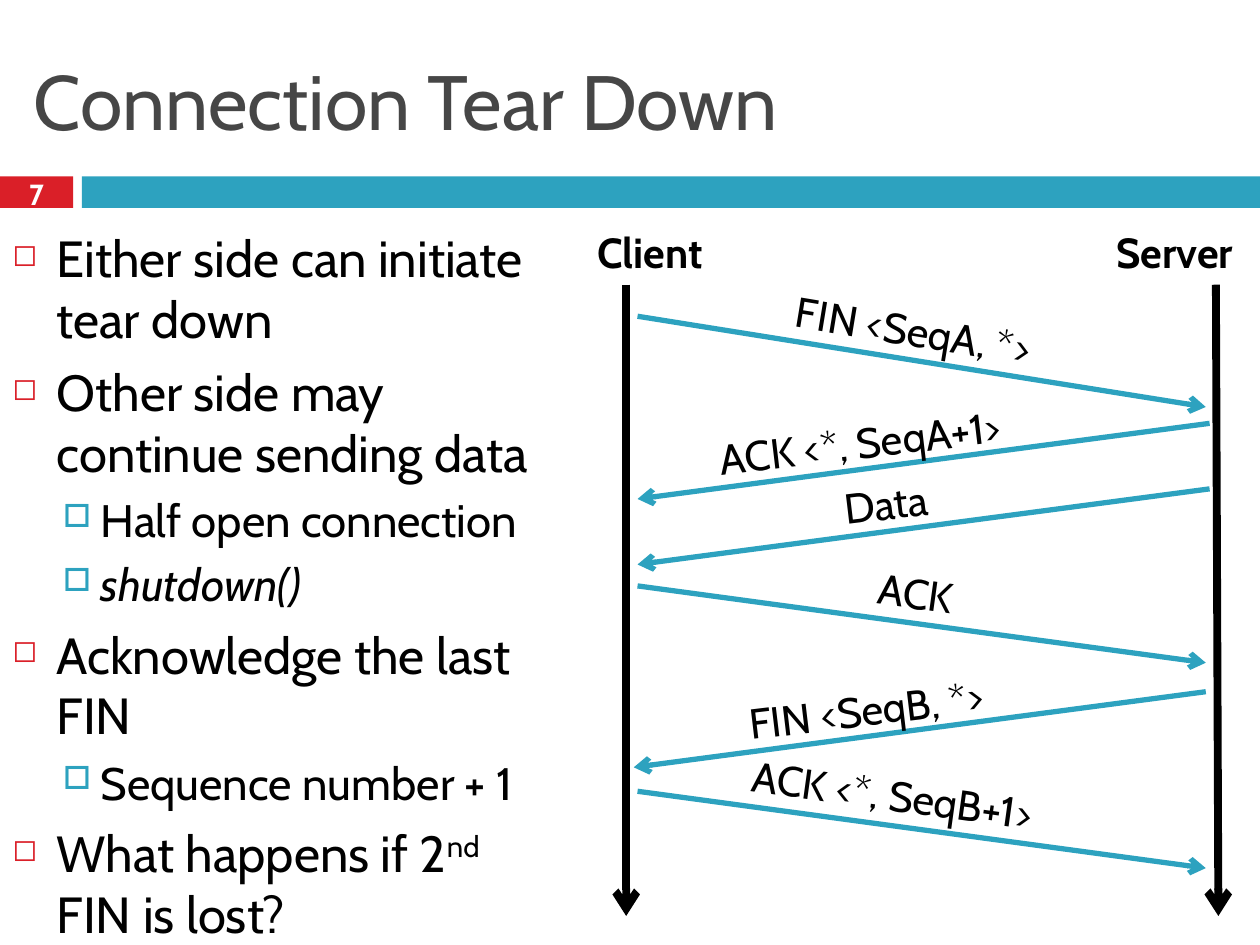
from dataclasses import dataclass

from lxml.etree import SubElement
from pptx import Presentation
from pptx.dml.color import RGBColor
from pptx.enum.shapes import MSO_CONNECTOR, MSO_SHAPE
from pptx.enum.text import MSO_ANCHOR, MSO_AUTO_SIZE, PP_ALIGN
from pptx.oxml.ns import qn
from pptx.util import Emu, Pt

PX_PER_INCH = 100
FONT = "Cabin"
RED = RGBColor(0xDA, 0x1F, 0x28)
TEAL = RGBColor(0x2D, 0xA2, 0xBF)
GREY = RGBColor(0x46, 0x46, 0x46)
BLACK = RGBColor(0, 0, 0)
WHITE = RGBColor(0xFF, 0xFF, 0xFF)


@dataclass(frozen=True)
class Level:
    size: int
    margin: int
    hang: int
    before: float
    bullet: str
    bullet_color: RGBColor
    bullet_percent: int


@dataclass(frozen=True)
class Span:
    text: str
    italic: bool = False
    superscript: bool = False


@dataclass(frozen=True)
class Bullet:
    level: Level
    spans: tuple[Span, ...]


@dataclass(frozen=True)
class Message:
    text: str
    start: tuple[int, int]
    end: tuple[int, int]
    label: tuple[int, int, int]  # left, top, width
    angle: float


MAIN = Level(29, 35, 35, 7, "◻", RED, 60)
SUB = Level(26, 70, 30, 5.5, "□", TEAL, 70)

BULLETS = [
    Bullet(MAIN, (Span("Either side can initiate tear down"),)),
    Bullet(MAIN, (Span("Other side may continue sending data"),)),
    Bullet(SUB, (Span("Half open connection"),)),
    Bullet(SUB, (Span("shutdown()", italic=True),)),
    Bullet(MAIN, (Span("Acknowledge the last FIN"),)),
    Bullet(SUB, (Span("Sequence number + 1"),)),
    Bullet(MAIN, (Span("What happens if 2"), Span("nd", superscript=True),
                  Span(" FIN is lost?"))),
]

MESSAGES = [
    Message("FIN <SeqA, *>", (506, 251), (957, 323), (621, 239, 237), 9.4),
    Message("ACK <*, SeqA+1>", (960, 336), (506, 396), (560, 323, 291), -6.9),
    Message("ACK", (506, 465), (957, 526), (687, 446, 89), 8),
    Message("Data", (960, 388), (506, 448), (660, 374, 91), -6.9),
    Message("FIN <SeqB, *>", (957, 549), (503, 609), (584, 536, 237), -6.9),
    Message("ACK <*, SeqB+1>", (506, 628), (957, 689), (586, 609, 291), 8),
]


def px(length: int) -> Emu:
    return Emu(length * 914400 // PX_PER_INCH)


def add_bar(shapes, left: int, width: int, color: RGBColor) -> None:
    bar = shapes.add_shape(MSO_SHAPE.RECTANGLE, px(left), px(140), px(width), px(25))
    bar.shadow.inherit = False
    bar.fill.solid()
    bar.fill.fore_color.rgb = color
    bar.line.fill.background()


def style(span, size: float, color: RGBColor, bold: bool = False, italic: bool = False) -> None:
    span.font.name = FONT
    span.font.size = Pt(size)
    span.font.color.rgb = color
    span.font.bold = bold
    span.font.italic = italic


def add_text(shapes, text: str, left: int, top: int, width: int, height: int = 50, *,
             size: float = 24, color: RGBColor = BLACK, bold: bool = False,
             align: PP_ALIGN = PP_ALIGN.LEFT, anchor: MSO_ANCHOR = MSO_ANCHOR.TOP,
             wrap: bool = False, angle: float = 0) -> None:
    box = shapes.add_textbox(px(left), px(top), px(width), px(height))
    box.rotation = angle
    frame = box.text_frame
    frame.word_wrap = wrap
    frame.auto_size = MSO_AUTO_SIZE.NONE if wrap else MSO_AUTO_SIZE.SHAPE_TO_FIT_TEXT
    frame.vertical_anchor = anchor
    para = frame.paragraphs[0]
    para.alignment = align
    span = para.add_run()
    span.text = text
    style(span, size, color, bold)


def add_arrow(shapes, start: tuple[int, int], end: tuple[int, int],
              color: RGBColor, weight: float) -> None:
    arrow = shapes.add_connector(MSO_CONNECTOR.STRAIGHT, *map(px, start + end))
    arrow.line.color.rgb = color
    arrow.line.width = Pt(weight)
    SubElement(arrow.line._get_or_add_ln(), qn("a:tailEnd"), type="arrow")
    SubElement(arrow._element.spPr, qn("a:effectLst"))


def set_bullet(para, level: Level) -> None:
    para.space_before = Pt(level.before)
    props = para._p.get_or_add_pPr()
    props.set("marL", str(px(level.margin)))
    props.set("indent", str(-px(level.hang)))
    color = SubElement(props, qn("a:buClr"))
    SubElement(color, qn("a:srgbClr"), val=str(level.bullet_color))
    SubElement(props, qn("a:buSzPct"), val=str(level.bullet_percent * 1000))
    SubElement(props, qn("a:buChar"), char=level.bullet)


def add_bullets(shapes, bullets: list[Bullet]) -> None:
    frame = shapes.add_textbox(px(0), px(175), px(459), px(558)).text_frame
    frame.word_wrap = True
    for index, bullet in enumerate(bullets):
        para = frame.add_paragraph() if index else frame.paragraphs[0]
        para.level = 0 if bullet.level is MAIN else 1
        set_bullet(para, bullet.level)
        for part in bullet.spans:
            span = para.add_run()
            span.text = part.text
            style(span, bullet.level.size, BLACK, italic=part.italic)
            if part.superscript:
                span.font._element.set("baseline", "30000")


def add_message(shapes, message: Message) -> None:
    """Draw a message arrow and its slanted label as one group."""
    group = shapes.add_group_shape().shapes
    add_arrow(group, message.start, message.end, TEAL, 3)
    add_text(group, message.text, *message.label, angle=message.angle)


def main() -> None:
    deck = Presentation()
    deck.slide_width, deck.slide_height = px(1000), px(750)
    shapes = deck.slides.add_slide(deck.slide_layouts[6]).shapes

    add_bar(shapes, 0, 58, RED)
    add_bar(shapes, 65, 935, TEAL)
    add_text(shapes, "Connection Tear Down", 17, 25, 967, 108, size=44, color=GREY,
             anchor=MSO_ANCHOR.MIDDLE, wrap=True)
    add_text(shapes, "7", 0, 137, 58, 33, size=16.6, color=WHITE, bold=True,
             align=PP_ALIGN.CENTER, anchor=MSO_ANCHOR.MIDDLE, wrap=True)
    add_bullets(shapes, BULLETS)

    add_arrow(shapes, (497, 226), (497, 727), BLACK, 4.5)
    add_arrow(shapes, (965, 226), (967, 727), BLACK, 4.5)
    add_text(shapes, "Client", 459, 175, 114, bold=True, align=PP_ALIGN.CENTER)
    add_text(shapes, "Server", 870, 175, 125, bold=True, align=PP_ALIGN.CENTER)
    for message in MESSAGES:
        add_message(shapes, message)

    deck.save("out.pptx")


if __name__ == "__main__":
    main()
